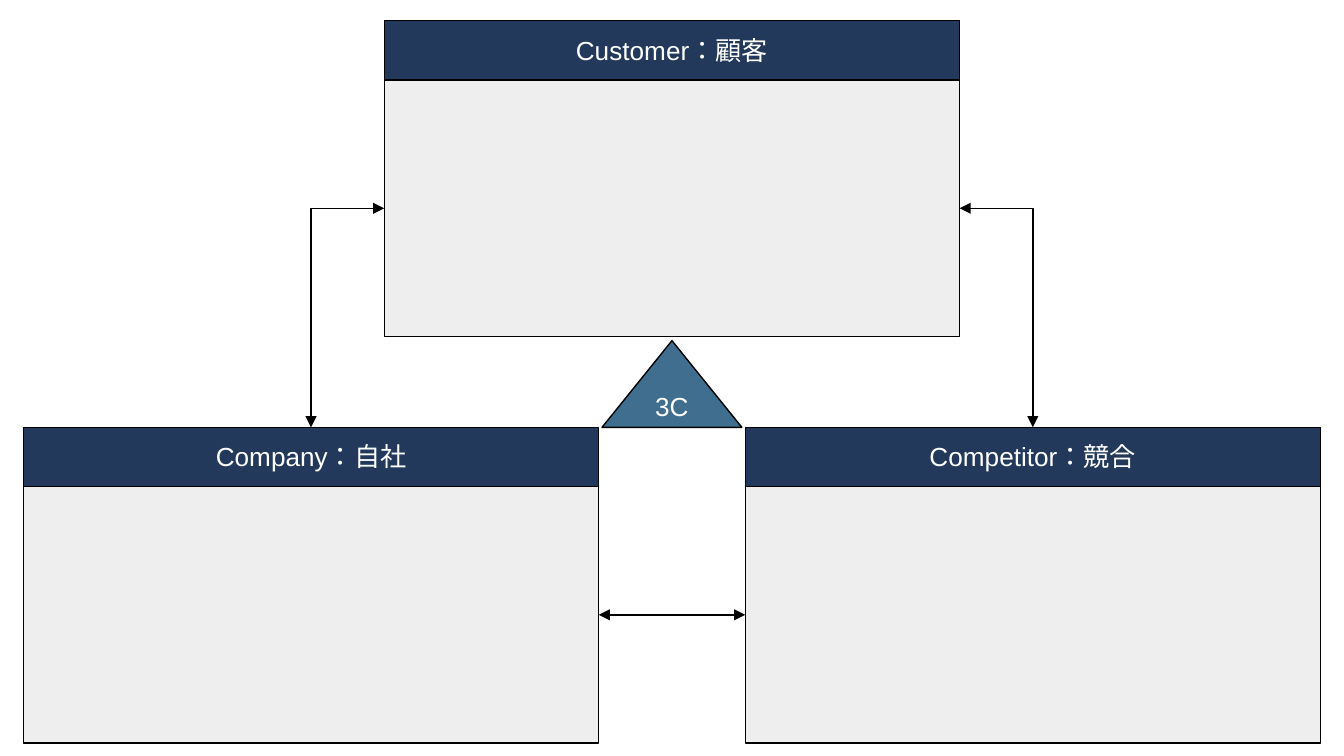
from dataclasses import dataclass

from lxml.etree import SubElement
from pptx import Presentation
from pptx.dml.color import RGBColor
from pptx.enum.lang import MSO_LANGUAGE_ID as Lang
from pptx.enum.shapes import MSO_CONNECTOR as Link, MSO_SHAPE as Kind
from pptx.enum.text import MSO_ANCHOR as Anchor, MSO_AUTO_SIZE as Fit, PP_ALIGN as Align
from pptx.oxml.ns import qn
from pptx.shapes.autoshape import Shape
from pptx.shapes.connector import Connector
from pptx.util import Emu, Pt

SCALE = 4572
WIDE, HEAD, BODY = 856, 88, 382
NAVY, TEAL, GRAY = "23395B", "406E8E", "EEEEEE"
BLACK, WHITE = "000000", "FFFFFF"


@dataclass(frozen=True)
class Panel:
    label: str
    left: int
    top: int

    @property
    def base(self) -> int:
        return self.top + HEAD

    @property
    def right(self) -> int:
        return self.left + WIDE

    @property
    def center(self) -> int:
        return self.left + WIDE // 2

    @property
    def middle(self) -> int:
        return self.base + BODY // 2


def px(size: int) -> Emu:
    return Emu(size * SCALE)


def color(code: str) -> RGBColor:
    return RGBColor.from_string(code)


def block(kind: Kind, left: int, top: int, wide: int, high: int, fill: str) -> Shape:
    shape = slide.shapes.add_shape(kind, px(left), px(top), px(wide), px(high))
    shape.shadow.inherit = False
    shape.fill.solid()
    shape.fill.fore_color.rgb = color(fill)
    shape.line.color.rgb = color(BLACK)
    shape.line.width = Pt(0.75)
    return shape


def write(shape: Shape, text: str, anchor: Anchor, fit: Fit) -> None:
    frame = shape.text_frame
    frame.margin_left = frame.margin_right = px(20)
    frame.margin_top = frame.margin_bottom = px(20)
    frame.word_wrap = True
    frame.auto_size = fit
    frame.vertical_anchor = anchor
    para = frame.paragraphs[0]
    para.alignment = Align.CENTER
    run = para.add_run()
    run.text = text
    run.font.name = "Arial"
    run.font.size = Pt(14)
    run.font.language_id = Lang.JAPANESE
    run.font.color.rgb = color(WHITE)


def arrow(kind: Link, x1: int, y1: int, x2: int, y2: int) -> Connector:
    link = slide.shapes.add_connector(kind, px(x1), px(y1), px(x2), px(y2))
    link.line.color.rgb = color(BLACK)
    link.line.width = Pt(0.75)
    props = link.element.spPr
    line = props.find(qn("a:ln"))
    for end in ("a:headEnd", "a:tailEnd"):
        SubElement(line, qn(end), type="triangle")
    SubElement(props, qn("a:effectLst"))
    if kind == Link.ELBOW:
        props.find(qn("a:prstGeom")).set("prst", "bentConnector2")
    return link


deck = Presentation()
deck.slide_width, deck.slide_height = px(2000), px(1125)
slide = deck.slides.add_slide(deck.slide_layouts[6])

firm = Panel("Company：自社", 35, 636)
rival = Panel("Competitor：競合", 1109, 636)
buyer = Panel("Customer：顧客", 572, 31)

boxes = {
    panel: block(Kind.RECTANGLE, panel.left, panel.base, WIDE, BODY, GRAY)
    for panel in (firm, rival, buyer)
}

arrow(Link.ELBOW, buyer.right, buyer.middle, rival.center, rival.top)
arrow(Link.ELBOW, buyer.left, buyer.middle, firm.center, firm.top)
link = arrow(Link.STRAIGHT, firm.right, firm.middle, rival.left, rival.middle)
link.begin_connect(boxes[firm], 3)
link.end_connect(boxes[rival], 1)

for panel in (buyer, firm, rival):
    bar = block(Kind.RECTANGLE, panel.left, panel.top, WIDE, HEAD, NAVY)
    write(bar, panel.label, Anchor.TOP, Fit.SHAPE_TO_FIT_TEXT)

peak = block(Kind.FLOWCHART_EXTRACT, 896, 507, 208, 129, TEAL)
write(peak, "3C", Anchor.MIDDLE, Fit.NONE)

deck.save("out.pptx")
